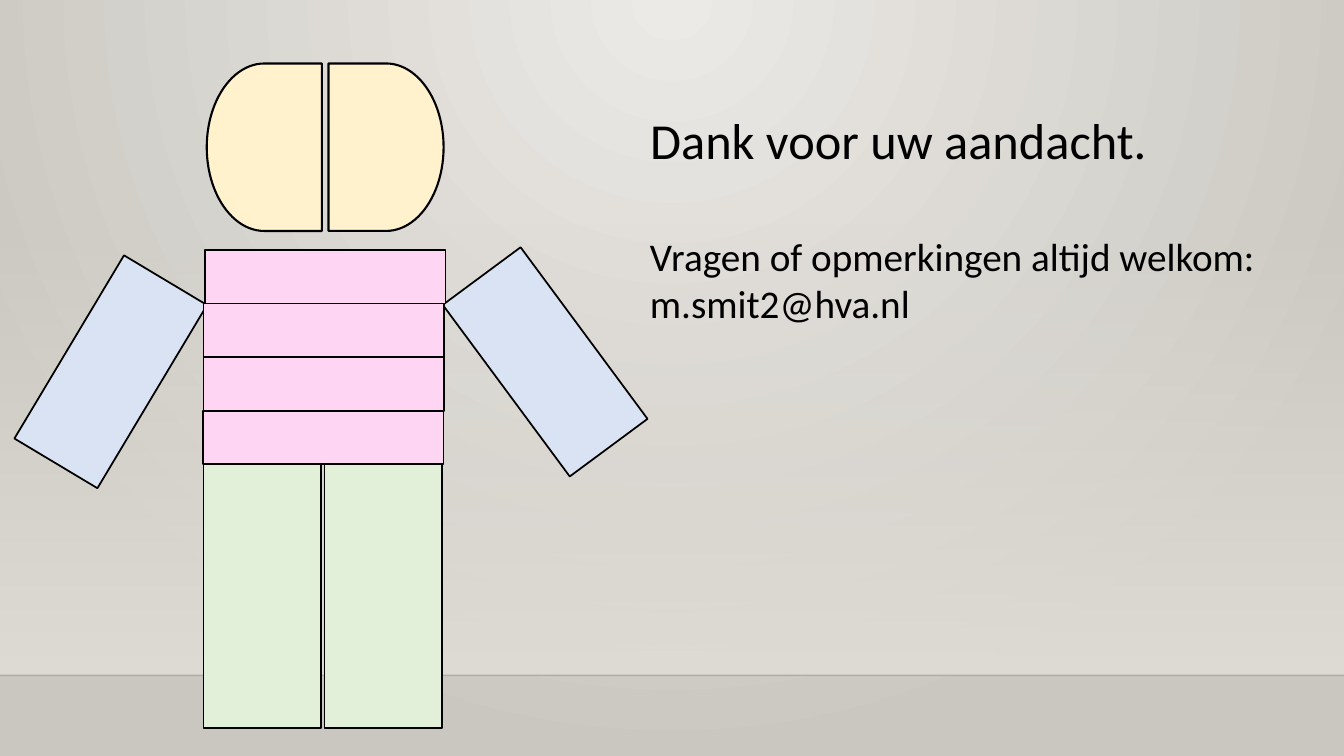
"""Build the closing slide: a figure of simple blocks beside a thank-you text."""
from lxml import etree
from pptx import Presentation
from pptx.dml.color import RGBColor
from pptx.enum.shapes import MSO_CONNECTOR, MSO_SHAPE
from pptx.enum.text import MSO_ANCHOR, MSO_AUTO_SIZE, PP_ALIGN
from pptx.oxml import parse_xml
from pptx.oxml.ns import nsdecls, qn
from pptx.util import Cm, Pt

RECTANGLE = MSO_SHAPE.RECTANGLE
DELAY = MSO_SHAPE.FLOWCHART_DELAY
STRAIGHT = MSO_CONNECTOR.STRAIGHT
TOP = MSO_ANCHOR.TOP
LEFT = PP_ALIGN.LEFT
NO_AUTOFIT = MSO_AUTO_SIZE.NONE

TITLE = "Dank voor uw aandacht."
CONTACT = "Vragen of opmerkingen altijd welkom: m.smit2@hva.nl"
FONT = "Calibri"
BLACK = "000000"
SKIN, PINK, BLUE, GREEN = "FFF2CC", "FFD5F4", "DAE3F3", "E2F0D9"
BACKDROP = ("ECEAE7", "CAC7C1")
WALL = "DFDBD5"

SLIDE_WIDTH, SLIDE_HEIGHT = 33.87, 19.05
WALL_TOP, FLOOR_TOP = 5.61, 17.02
TEXT_LEFT, TEXT_WIDTH = 16.13, 16.94
BODY_LEFT, BODY_TOP, BODY_WIDTH = 5.13, 6.3, 6.07
STRIPE_HEIGHT, STRIPE_COUNT = 1.35, 4
LEG_TOP = BODY_TOP + STRIPE_HEIGHT * STRIPE_COUNT

HEAD_SIZE, ARM_SIZE, LEG_SIZE = (2.9, 4.22), (2.44, 5.38), (2.97, 6.65)
LIMBS = [
    (RECTANGLE, (8.18, LEG_TOP), LEG_SIZE, 0, GREEN, 1.25),
    (RECTANGLE, (BODY_LEFT, LEG_TOP), LEG_SIZE, 0, GREEN, 1.25),
    (DELAY, (8.28, 1.6), HEAD_SIZE, 0, SKIN, 1.5),
    (DELAY, (5.21, 1.6), HEAD_SIZE, 180, SKIN, 1.5),
    (RECTANGLE, (12.52, 6.43), ARM_SIZE, 323.5, BLUE, 1.25),
    (RECTANGLE, (1.57, 6.68), ARM_SIZE, 30.9, BLUE, 1.25),
]
STRIPE_LEFTS = [5.16, BODY_LEFT, BODY_LEFT, 5.11]
STRIPES = [
    (RECTANGLE, (left, BODY_TOP + row * STRIPE_HEIGHT),
     (BODY_WIDTH, STRIPE_HEIGHT), 0, PINK, 1.25)
    for row, left in reversed(list(enumerate(STRIPE_LEFTS)))
]


def color(value):
    return RGBColor.from_string(value)


def set_gradient(fill, first, last):
    fill.gradient()
    for stop, value in zip(fill.gradient_stops, (first, last)):
        stop.color.rgb = color(value)


def set_alpha(element, percent):
    first_color = next(element.iter(qn("a:srgbClr")))
    etree.SubElement(first_color, qn("a:alpha"), val=str(percent * 1000))


def paint_background(slide):
    set_gradient(slide.background.fill, *BACKDROP)
    gradient = next(slide.element.iter(qn("a:gradFill")))
    direction = gradient.find(qn("a:lin"))
    circle = parse_xml(
        f'<a:path {nsdecls("a")} path="circle">'
        '<a:fillToRect l="43000" r="43000" b="100000"/></a:path>')
    gradient.replace(direction, circle)


def add_room(slide):
    wall = slide.shapes.add_shape(
        RECTANGLE, 0, Cm(WALL_TOP), Cm(SLIDE_WIDTH), Cm(FLOOR_TOP - WALL_TOP))
    wall.shadow.inherit = False
    wall.line.fill.background()
    set_gradient(wall.fill, WALL, WALL)
    wall.fill.gradient_angle = 270
    set_alpha(wall.element, 0)
    edge = slide.shapes.add_connector(
        STRAIGHT, 0, Cm(FLOOR_TOP), Cm(SLIDE_WIDTH), Cm(FLOOR_TOP))
    edge.line.color.rgb = color(BLACK)
    edge.line.width = Pt(1)
    set_alpha(edge.element, 20)
    etree.SubElement(edge.element.spPr, qn("a:effectLst"))


def add_block(slide, kind, position, size, rotation, fill, line_width):
    block = slide.shapes.add_shape(
        kind, *(Cm(length) for length in position + size))
    block.rotation = rotation
    block.shadow.inherit = False
    block.fill.solid()
    block.fill.fore_color.rgb = color(fill)
    block.line.color.rgb = color(BLACK)
    block.line.width = Pt(line_width)


def write(shape, text, size):
    frame = shape.text_frame
    frame.text = text
    frame.word_wrap = True
    frame.auto_size = NO_AUTOFIT
    frame.vertical_anchor = TOP
    paragraph = frame.paragraphs[0]
    paragraph.alignment = LEFT
    font = paragraph.runs[0].font
    font.name = FONT
    font.size = Pt(size)
    font.color.rgb = color(BLACK)


def main():
    presentation = Presentation()
    presentation.slide_width = Cm(SLIDE_WIDTH)
    presentation.slide_height = Cm(SLIDE_HEIGHT)
    slide = presentation.slides.add_slide(presentation.slide_layouts[5])
    paint_background(slide)
    add_room(slide)
    for block in LIMBS + STRIPES:
        add_block(slide, *block)

    title = slide.shapes.title
    title.left, title.top = Cm(TEXT_LEFT), Cm(2.62)
    title.width, title.height = Cm(TEXT_WIDTH), Cm(1.9)
    write(title, TITLE, 36)
    contact = slide.shapes.add_textbox(
        Cm(TEXT_LEFT), Cm(5.72), Cm(TEXT_WIDTH), Cm(3.8))
    write(contact, CONTACT, 28)
    presentation.save("out.pptx")


if __name__ == "__main__":
    main()
